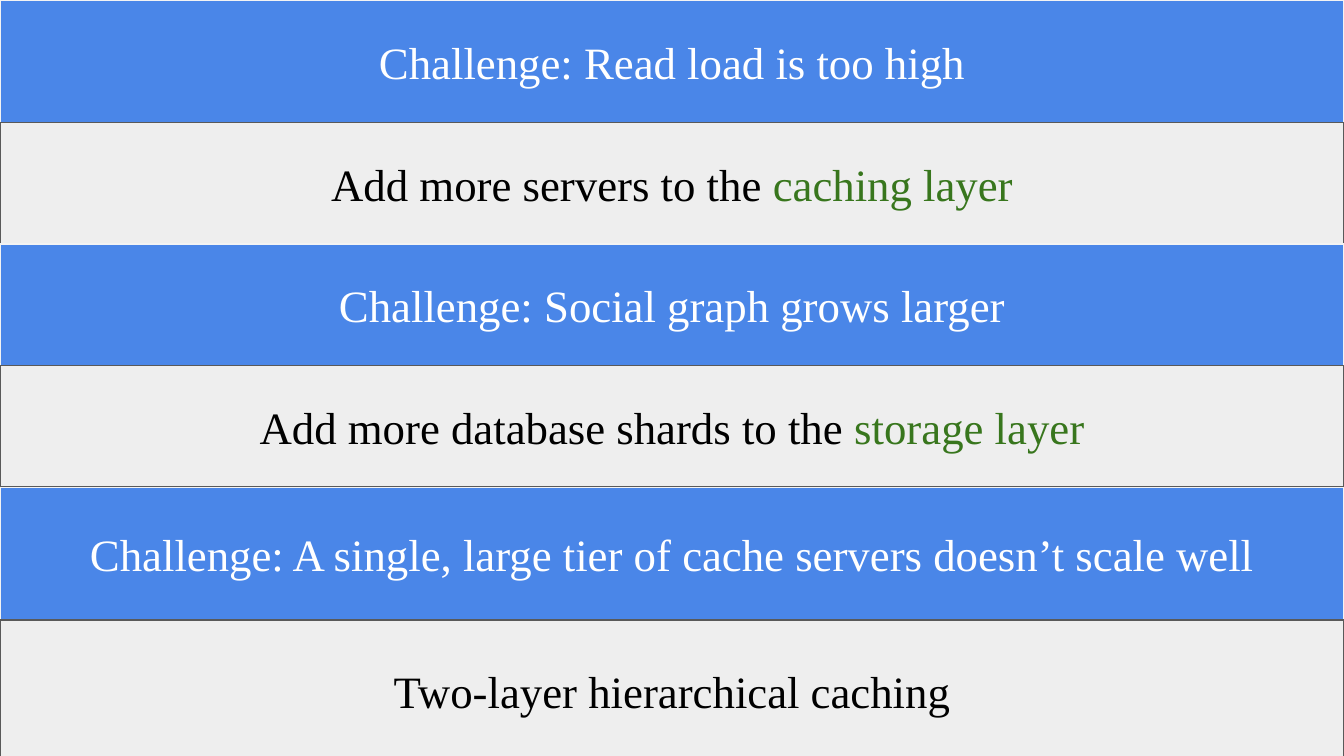
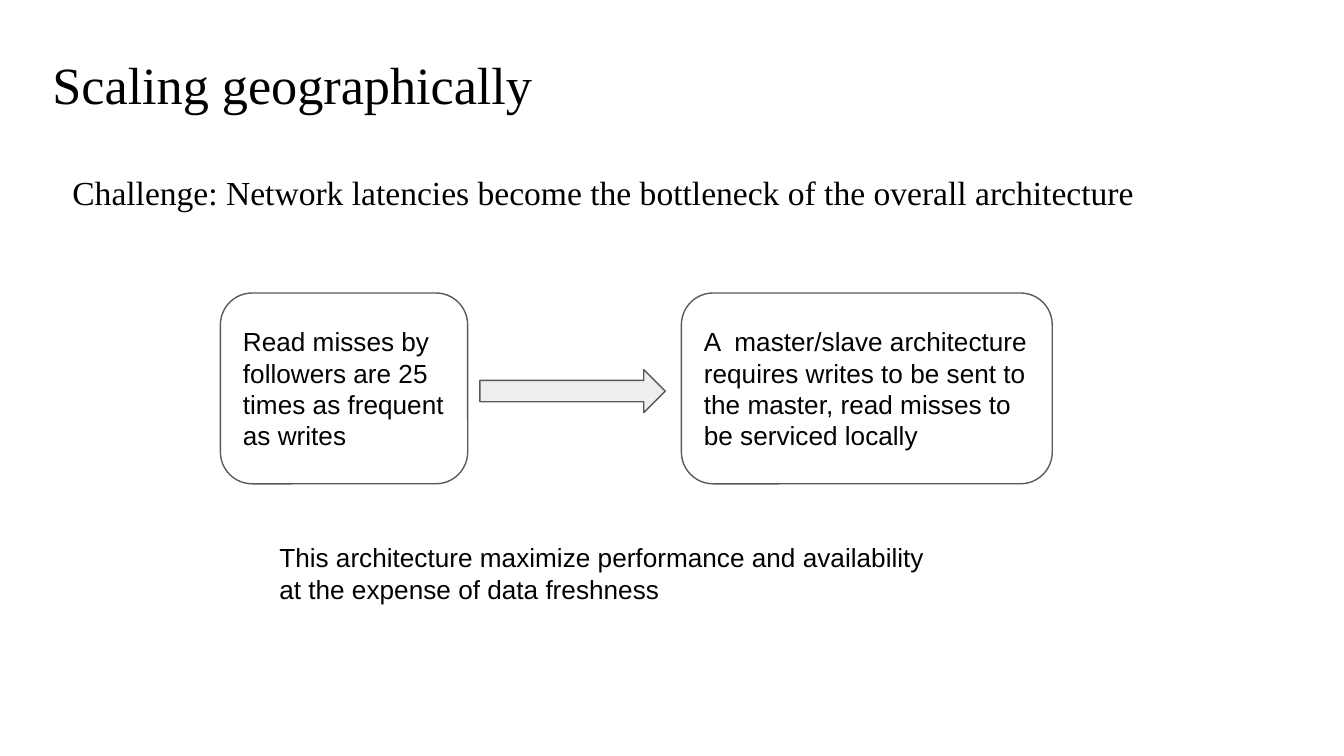
from dataclasses import dataclass

from pptx import Presentation
from pptx.dml.color import RGBColor
from pptx.enum.shapes import MSO_SHAPE
from pptx.enum.text import MSO_ANCHOR, MSO_AUTO_SIZE, PP_ALIGN
from pptx.shapes.autoshape import Shape
from pptx.slide import Slide
from pptx.text.text import TextFrame
from pptx.util import Emu, Pt

RECTANGLE = MSO_SHAPE.RECTANGLE
ROUNDED_RECTANGLE = MSO_SHAPE.ROUNDED_RECTANGLE
RIGHT_ARROW = MSO_SHAPE.RIGHT_ARROW
TOP, MIDDLE = MSO_ANCHOR.TOP, MSO_ANCHOR.MIDDLE
LEFT, CENTER = PP_ALIGN.LEFT, PP_ALIGN.CENTER
NO_AUTO_SIZE = MSO_AUTO_SIZE.NONE

WHITE = RGBColor(0xFF, 0xFF, 0xFF)
BLACK = RGBColor(0x00, 0x00, 0x00)
BLUE = RGBColor(0x4A, 0x86, 0xE8)
PALE_GRAY = RGBColor(0xEE, 0xEE, 0xEE)
LIGHT_LINE = RGBColor(0xF3, 0xF3, 0xF3)
DARK_LINE = RGBColor(0x59, 0x59, 0x59)
GREEN = RGBColor(0x38, 0x76, 0x1D)

EMU_PER_PX = 4572
SLIDE_WIDTH, SLIDE_HEIGHT = 2000, 1125
INSET = 20
LINE_WIDTH = Pt(0.75)
TITLE_ONLY_LAYOUT, BLANK_LAYOUT = 5, 6


@dataclass(frozen=True)
class Box:
    left: int
    top: int
    width: int
    height: int

    def emu(self) -> tuple[Emu, Emu, Emu, Emu]:
        return px(self.left), px(self.top), px(self.width), px(self.height)


@dataclass(frozen=True)
class TextStyle:
    font: str
    size: int
    color: RGBColor = BLACK
    align: PP_ALIGN = LEFT
    anchor: MSO_ANCHOR = TOP


@dataclass(frozen=True)
class Band:
    text: str
    height: int
    highlight: str = ""


@dataclass(frozen=True)
class Card:
    box: Box
    text: str


TITLE_STYLE = TextStyle("Times New Roman", 28)
SUBTITLE_STYLE = TextStyle("Times New Roman", 18)
CHALLENGE_STYLE = TextStyle("Times New Roman", 24, WHITE, CENTER, MIDDLE)
ANSWER_STYLE = TextStyle("Times New Roman", 24, BLACK, CENTER, MIDDLE)
CARD_STYLE = TextStyle("Arial", 14, anchor=MIDDLE)
NOTE_STYLE = TextStyle("Arial", 14)

BANDS_TOP = 1
BANDS = [
    Band("Challenge: Read load is too high", 181),
    Band("Add more servers to the ", 181, "caching layer"),
    Band("Challenge: Social graph grows larger", 181),
    Band("Add more database shards to the ", 181, "storage layer"),
    Band("Challenge: A single, large tier of cache servers doesn’t scale well", 198),
    Band("Two-layer hierarchical caching", 208),
]

CARD_TOP, CARD_HEIGHT = 436, 284
CARDS = [
    Card(
        Box(328, CARD_TOP, 368, CARD_HEIGHT),
        "Read misses by followers are 25 times as frequent as writes",
    ),
    Card(
        Box(1014, CARD_TOP, 552, CARD_HEIGHT),
        "A  master/slave architecture\n"
        "requires writes to be sent to the master, read misses to be serviced locally",
    ),
]


def px(length: int) -> Emu:
    return Emu(length * EMU_PER_PX)


def write_text(text_frame: TextFrame, text: str, style: TextStyle, highlight: str = "") -> None:
    text_frame.text = text
    text_frame.word_wrap = True
    text_frame.auto_size = NO_AUTO_SIZE
    text_frame.vertical_anchor = style.anchor
    text_frame.margin_left = text_frame.margin_right = px(INSET)
    text_frame.margin_top = text_frame.margin_bottom = px(INSET)
    if highlight:
        text_frame.paragraphs[-1].add_run().text = highlight
    for paragraph in text_frame.paragraphs:
        paragraph.alignment = style.align
        for run in paragraph.runs:
            run.font.name = style.font
            run.font.size = Pt(style.size)
            run.font.color.rgb = GREEN if run.text == highlight else style.color


def add_filled_shape(
    slide: Slide, kind: MSO_SHAPE, box: Box, fill: RGBColor, line: RGBColor
) -> Shape:
    shape = slide.shapes.add_shape(kind, *box.emu())
    shape.shadow.inherit = False
    shape.fill.solid()
    shape.fill.fore_color.rgb = fill
    shape.line.color.rgb = line
    shape.line.width = LINE_WIDTH
    return shape


def add_text_box(slide: Slide, box: Box, text: str, style: TextStyle) -> None:
    write_text(slide.shapes.add_textbox(*box.emu()).text_frame, text, style)


def set_title(slide: Slide, box: Box, text: str) -> None:
    title = slide.shapes.title
    title.left, title.top, title.width, title.height = box.emu()
    write_text(title.text_frame, text, TITLE_STYLE)


def build_challenges(slide: Slide) -> None:
    top = BANDS_TOP
    for index, band in enumerate(BANDS):
        is_challenge = index % 2 == 0
        fill, line, style = (
            (BLUE, LIGHT_LINE, CHALLENGE_STYLE)
            if is_challenge
            else (PALE_GRAY, DARK_LINE, ANSWER_STYLE)
        )
        box = Box(0, top, SLIDE_WIDTH, band.height)
        shape = add_filled_shape(slide, RECTANGLE, box, fill, line)
        write_text(shape.text_frame, band.text, style, band.highlight)
        top += band.height


def build_geography(slide: Slide) -> None:
    set_title(slide, Box(58, 58, 1864, 126), "Scaling geographically")
    add_text_box(
        slide,
        Box(88, 236, 1634, 94),
        "Challenge: Network latencies become the bottleneck of the overall architecture",
        SUBTITLE_STYLE,
    )
    for card in CARDS:
        shape = add_filled_shape(slide, ROUNDED_RECTANGLE, card.box, WHITE, DARK_LINE)
        write_text(shape.text_frame, card.text, CARD_STYLE)
    add_filled_shape(slide, RIGHT_ARROW, Box(714, 550, 276, 64), PALE_GRAY, DARK_LINE)
    add_text_box(
        slide,
        Box(396, 786, 1016, 126),
        "This architecture maximize performance and availability "
        "at the expense of data freshness",
        NOTE_STYLE,
    )


def main() -> None:
    presentation = Presentation()
    presentation.slide_width = px(SLIDE_WIDTH)
    presentation.slide_height = px(SLIDE_HEIGHT)
    layouts = presentation.slide_layouts
    build_challenges(presentation.slides.add_slide(layouts[BLANK_LAYOUT]))
    build_geography(presentation.slides.add_slide(layouts[TITLE_ONLY_LAYOUT]))
    presentation.save("out.pptx")


if __name__ == "__main__":
    main()
